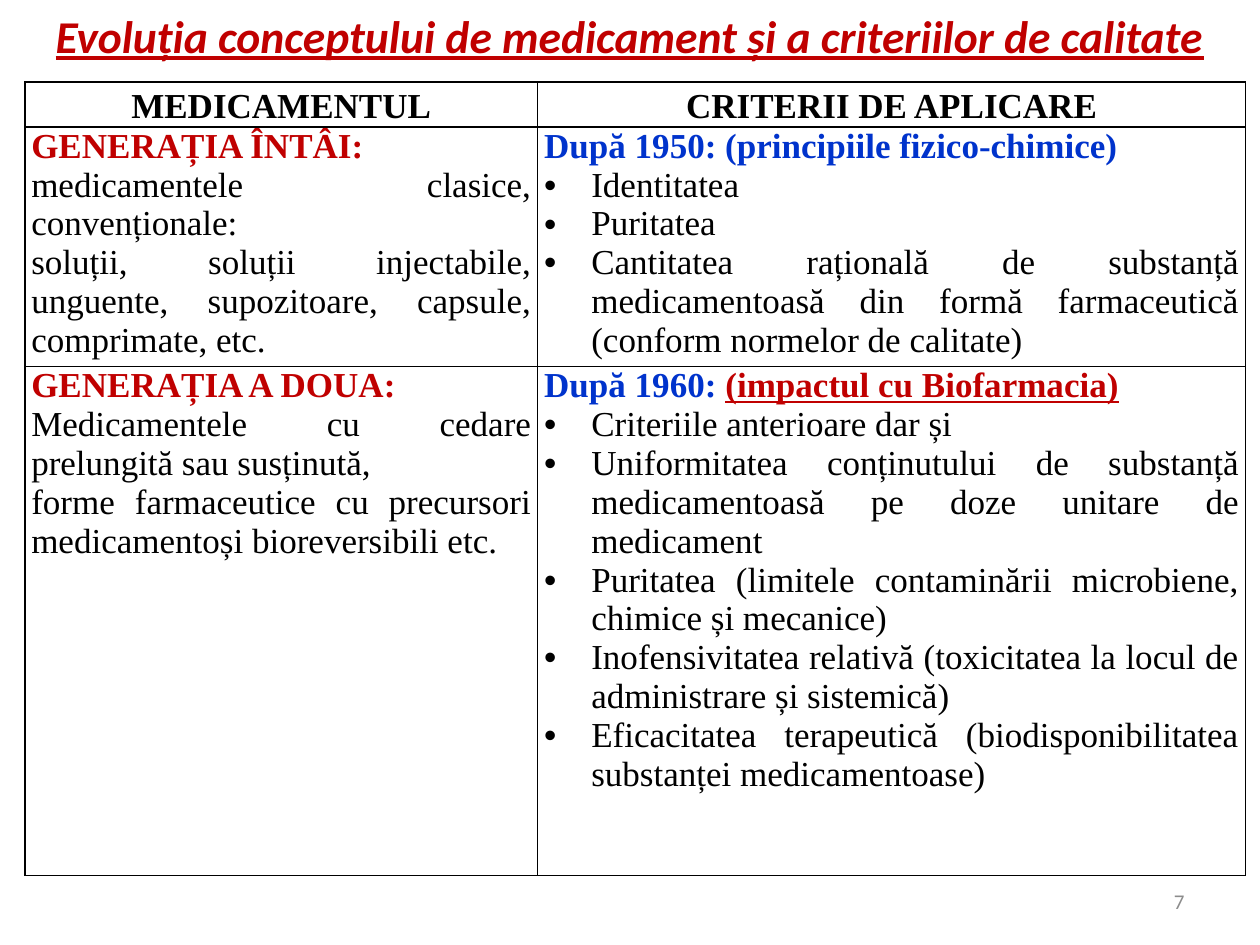
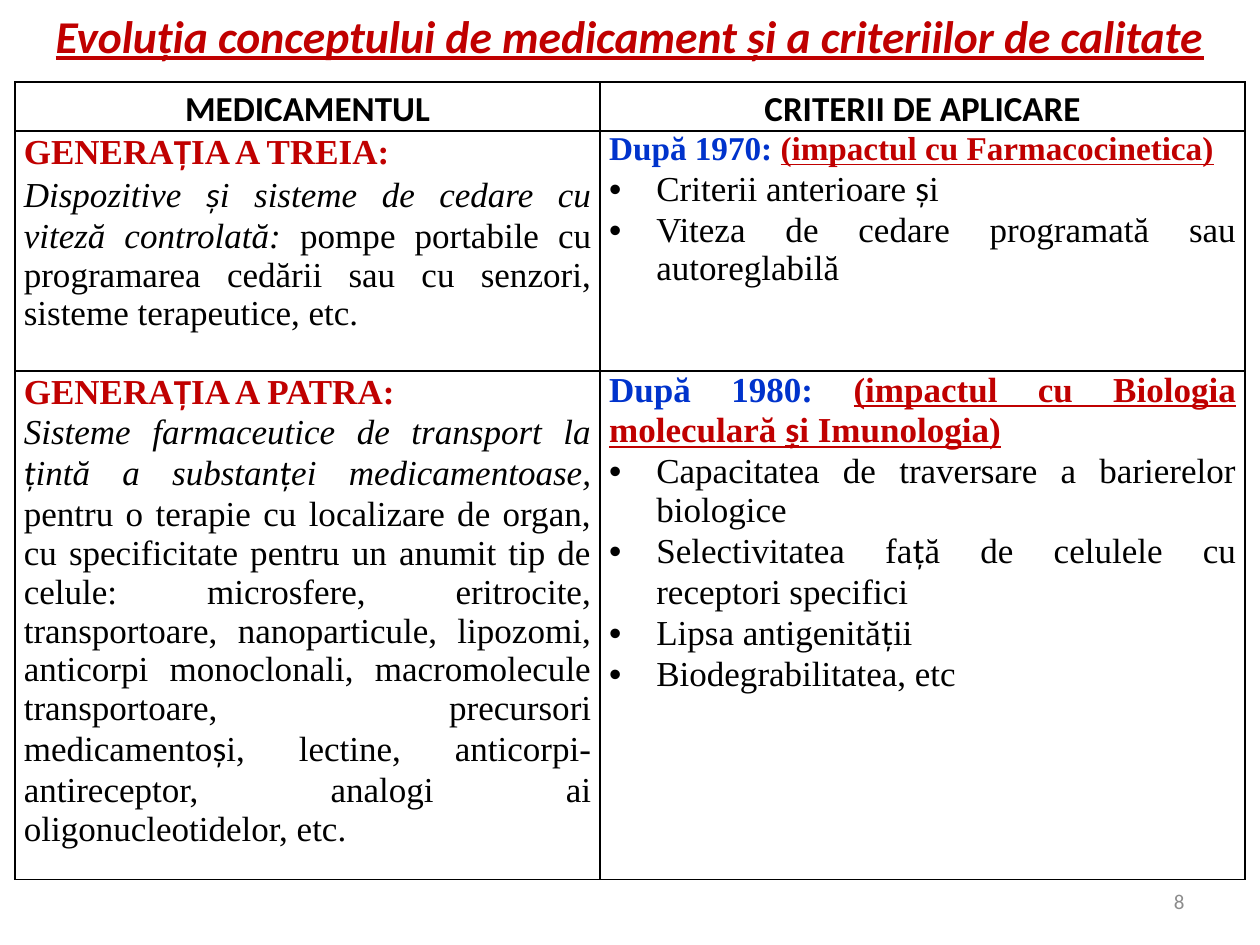
from itertools import groupby
from lxml import etree
from pptx import Presentation
from pptx.dml.color import RGBColor
from pptx.enum import text as t
from pptx.oxml.ns import qn
from pptx.util import Cm, Pt

RED, BLUE, BLACK, GREY = "C00000", "0033CC", "000000", "8C8C8C"
SERIF, SANS = "Times New Roman", "Calibri"
WIDTH, HEIGHT = 25.4, 19.05
TITLE = "Evoluția conceptului de medicament și a criteriilor de calitate"
HEADS = ("MEDICAMENTUL", "CRITERII DE APLICARE")
ROWS = (0.91, 4.83, 10.26)
INDENT = Cm(0.95)

# colour, bold, italic, underline
STYLES = {
    "plain": (BLACK, False, False, False),
    "slant": (BLACK, False, True, False),
    "head": (BLACK, True, False, False),
    "red": (RED, True, False, False),
    "blue": (BLUE, True, False, False),
    "impact": (RED, True, False, True),
    "title": (RED, True, True, True),
    "page": (GREY, False, False, False),
}


def rgb(code):
    return RGBColor.from_string(code)


def add_run(para, words, style="plain", size=20, face=SERIF):
    run = para.add_run()
    run.text = words
    font = run.font
    font.name, font.size = face, Pt(size)
    colour, font.bold, font.italic, font.underline = STYLES[style]
    font.color.rgb = rgb(colour)


def add_mixed(para, words, style, size):
    """Set comma-below letters in the sans face, the rest in serif."""
    for comma, part in groupby(words, lambda char: char in "șțȘȚ"):
        add_run(para, "".join(part), style, size, SANS if comma else SERIF)


def add_bullet(para):
    props = para._p.get_or_add_pPr()
    props.set("marL", str(INDENT))
    props.set("indent", str(-INDENT))
    etree.SubElement(props, qn("a:buFont"), typeface="Arial")
    etree.SubElement(props, qn("a:buChar"), char="•")


def frame_cell(cell, pad):
    cell.margin_left = cell.margin_right = Cm(pad)
    cell.margin_top = cell.margin_bottom = 0
    props = cell._tc.get_or_add_tcPr()
    for side in "LRTB":
        line = etree.SubElement(props, qn("a:ln" + side), w=str(Pt(1)))
        fill = etree.SubElement(line, qn("a:solidFill"))
        etree.SubElement(fill, qn("a:srgbClr"), val=BLACK)
    cell.fill.background()


def fill_cell(cell, lines, mixed):
    """Write lines: a string is a bullet, a list holds (style, words[, size])."""
    frame = cell.text_frame
    for row, line in enumerate(lines):
        para = frame.add_paragraph() if row else frame.paragraphs[0]
        para.alignment = t.PP_ALIGN.JUSTIFY
        if isinstance(line, str):
            add_bullet(para)
            line = [("plain", line)]
        for style, words, *size in line:
            write = add_mixed if mixed else add_run
            write(para, words, style, size[0] if size else 20)


def add_title(slide, left, top, width, height):
    title = slide.shapes.title
    title.left, title.top = Cm(left), Cm(top)
    title.width, title.height = Cm(width), Cm(height)
    frame = title.text_frame
    frame.auto_size = t.MSO_AUTO_SIZE.NONE
    frame.vertical_anchor = t.MSO_ANCHOR.MIDDLE
    para = frame.paragraphs[0]
    para.alignment = t.PP_ALIGN.CENTER
    add_run(para, TITLE, "title", 26, SANS)


def add_page(slide, number, left, top, width, height):
    box = slide.shapes.add_textbox(Cm(left), Cm(top), Cm(width), Cm(height))
    frame = box.text_frame
    frame.word_wrap = True
    frame.vertical_anchor = t.MSO_ANCHOR.MIDDLE
    para = frame.paragraphs[0]
    para.alignment = t.PP_ALIGN.RIGHT
    add_run(para, str(number), "page", 12, SANS)


def add_grid(slide, left, top, cols, rows, pad, face, mixed):
    table = slide.shapes.add_table(
        len(rows) + 1, len(cols), Cm(left), Cm(top),
        Cm(sum(cols)), Cm(sum(ROWS))).table
    table.horz_banding = table.first_row = False
    for col, width in zip(table.columns, cols):
        col.width = Cm(width)
    for row, height in zip(table.rows, ROWS):
        row.height = Cm(height)
    for col, head in enumerate(HEADS):
        cell = table.cell(0, col)
        frame_cell(cell, 0.13)
        para = cell.text_frame.paragraphs[0]
        para.alignment = t.PP_ALIGN.CENTER
        para.line_spacing = 1.15
        add_run(para, head, "head", 20, face)
    for row, cells in enumerate(rows, 1):
        for col, lines in enumerate(cells):
            cell = table.cell(row, col)
            frame_cell(cell, pad)
            fill_cell(cell, lines, mixed)


EARLY = [
    ([[("red", "GENERAȚIA ÎNTÂI: ")],
      [("plain", "medicamentele clasice, convenționale: ")],
      [("plain", "soluții, soluții injectabile, unguente, supozitoare, "
                 "capsule, comprimate, etc.")]],
     [[("blue", "După 1950: (principiile fizico-chimice)")],
      "Identitatea",
      "Puritatea",
      "Cantitatea rațională de substanță medicamentoasă din formă "
      "farmaceutică (conform normelor de calitate)"]),
    ([[("red", "GENERAȚIA A DOUA:")],
      [("plain", "Medicamentele cu cedare prelungită sau susținută, ")],
      [("plain", "forme farmaceutice cu precursori medicamentoși "
                 "bioreversibili etc.")]],
     [[("blue", "După 1960: "), ("impact", "(impactul cu Biofarmacia)")],
      "Criteriile anterioare dar și",
      "Uniformitatea conținutului de substanță medicamentoasă pe doze "
      "unitare de medicament",
      "Puritatea (limitele contaminării microbiene, chimice și mecanice)",
      "Inofensivitatea relativă (toxicitatea la locul de administrare și "
      "sistemică)",
      "Eficacitatea terapeutică (biodisponibilitatea substanței "
      "medicamentoase)"]),
]

LATE = [
    ([[("red", "GENERAȚIA A TREIA:")],
      [("slant", "Dispozitive și sisteme de cedare cu viteză controlată: "),
       ("plain", "pompe portabile cu programarea cedării sau cu senzori, "
                 "sisteme terapeutice, etc.")]],
     [[("blue", "După 1970: ", 19),
       ("impact", "(impactul cu Farmacocinetica)", 19)],
      "Criterii anterioare și",
      "Viteza de cedare programată sau autoreglabilă"]),
    ([[("red", "GENERAȚIA A PATRA:")],
      [("slant", "Sisteme farmaceutice de transport la țintă a substanței "
                 "medicamentoase, "),
       ("plain", "pentru o terapie cu localizare de organ, cu specificitate "
                 "pentru un anumit tip de celule: microsfere, eritrocite, "
                 "transportoare, nanoparticule, lipozomi, anticorpi "
                 "monoclonali, macromolecule transportoare, precursori "
                 "medicamentoși, lectine, anticorpi-antireceptor, analogi ai "
                 "oligonucleotidelor, etc.")]],
     [[("blue", "După 1980: "),
       ("impact", "(impactul cu Biologia moleculară și Imunologia)")],
      "Capacitatea de traversare a barierelor biologice",
      "Selectivitatea față de celulele cu receptori specifici",
      "Lipsa antigenității",
      "Biodegrabilitatea, etc"]),
]


def add_slide(deck, number, left, cols, rows, pad, face, mixed):
    slide = deck.slides.add_slide(deck.slide_layouts[5])
    add_title(slide, 0, 0.13, WIDTH, 1.17)
    add_grid(slide, left, 1.65, cols, rows, pad, face, mixed)
    add_page(slide, number, 18.21, 17.65, 5.92, 1.02)


def main():
    deck = Presentation()
    deck.slide_width, deck.slide_height = Cm(WIDTH), Cm(HEIGHT)
    add_slide(deck, 7, 0.5, (10.34, 14.27), EARLY, 0.13, SERIF, False)
    add_slide(deck, 8, 0.3, (11.8, 13), LATE, 0.18, SANS, True)
    deck.save("out.pptx")


if __name__ == "__main__":
    main()
